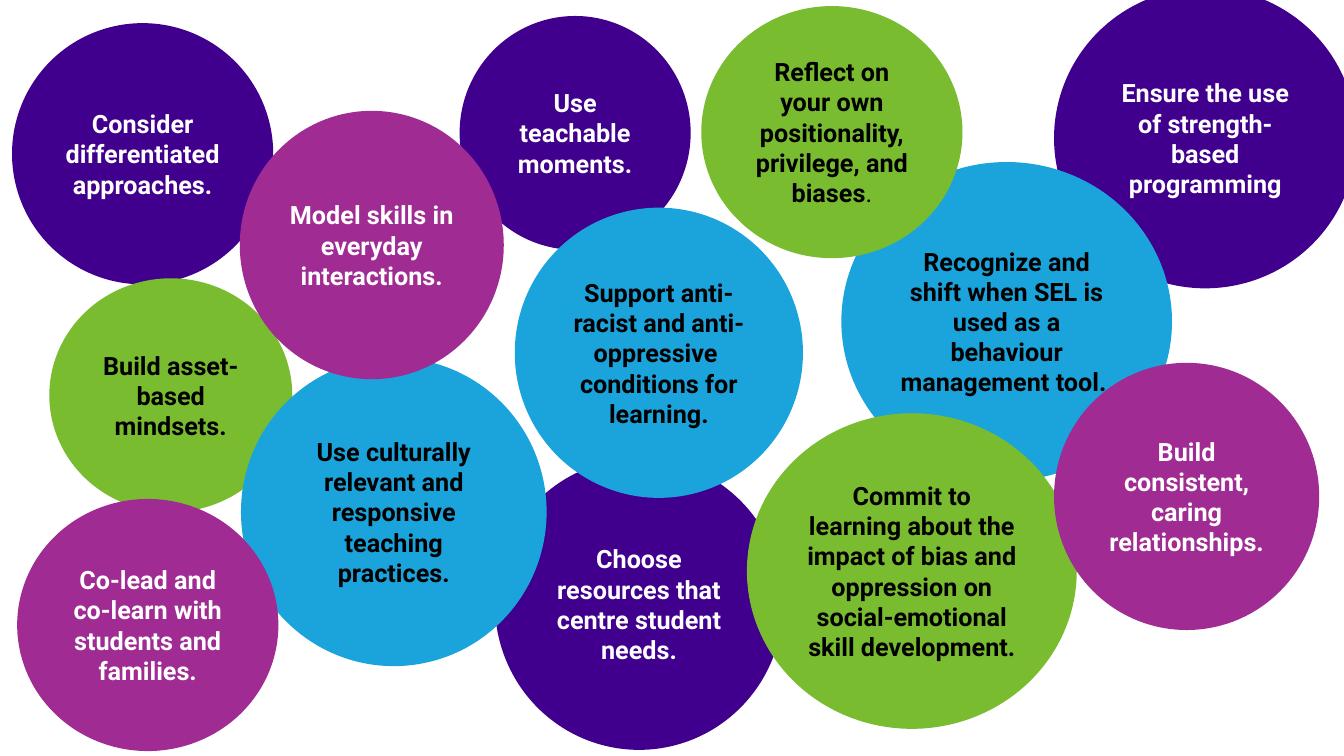
from dataclasses import dataclass

from pptx import Presentation
from pptx.dml.color import RGBColor
from pptx.enum.shapes import MSO_SHAPE
from pptx.enum.text import MSO_ANCHOR, PP_ALIGN
from pptx.shapes.autoshape import Shape
from pptx.slide import Slide
from pptx.util import Cm, Pt

OVAL = MSO_SHAPE.OVAL
MIDDLE = MSO_ANCHOR.MIDDLE
CENTER = PP_ALIGN.CENTER

PURPLE = RGBColor(0x40, 0x00, 0x8D)
BLUE = RGBColor(0x1B, 0xA3, 0xDC)
GREEN = RGBColor(0x7A, 0xBC, 0x30)
MAGENTA = RGBColor(0xA0, 0x2B, 0x93)
WHITE = RGBColor(0xFF, 0xFF, 0xFF)
BLACK = RGBColor(0x00, 0x00, 0x00)

TEXT_COLORS = {PURPLE: WHITE, MAGENTA: WHITE, BLUE: BLACK, GREEN: BLACK}
FONT_FORMAT = {"name": "Roboto", "size": Pt(18), "bold": True}
BLANK_LAYOUT = 6


@dataclass(frozen=True)
class Bubble:
    left: float
    top: float
    width: float
    height: float
    color: RGBColor
    text: str
    plain_ending: str = ""


BUBBLES = [
    Bubble(0.33, 0.61, 6.53, 6.53, PURPLE, "Consider differentiated approaches."),
    Bubble(11.61, 0.43, 5.77, 5.84, PURPLE, "Use teachable moments."),
    Bubble(12.5, 11.58, 7.21, 7.29, PURPLE, "Choose resources that centre student needs."),
    Bubble(26.59, -0.28, 7.57, 7.52, PURPLE, "Ensure the use of strength-based\nprogramming"),
    Bubble(21.23, 4.11, 8.28, 7.98, BLUE,
           "Recognize and shift when SEL is used as a behaviour management tool. "),
    Bubble(17.7, 0.18, 6.53, 6.3, GREEN,
           "Reflect on your own positionality, privilege, and biases", "."),
    Bubble(1.27, 7.04, 6.07, 5.84, GREEN, "Build asset-based mindsets."),
    Bubble(18.85, 10.44, 8.26, 7.9, GREEN,
           "Commit to learning about the impact of bias and oppression on "
           "social-emotional skill development."),
    Bubble(6.1, 9.04, 7.65, 7.72, BLUE,
           "Use culturally relevant and responsive teaching practices."),
    Bubble(13, 5.26, 7.21, 7.26, BLUE,
           "Support anti-racist and anti-oppressive \nconditions for learning."),
    Bubble(26.59, 9.17, 6.63, 6.68, MAGENTA, "Build consistent, caring relationships."),
    Bubble(6.07, 2.82, 6.6, 6.71, MAGENTA, "Model skills in everyday interactions."),
    Bubble(0.46, 12.6, 6.53, 6.3, MAGENTA,
           "Co-lead and co-learn with students and families."),
]


def write_text(shape: Shape, bubble: Bubble) -> None:
    text_frame = shape.text_frame
    text_frame.word_wrap = True
    text_frame.vertical_anchor = MIDDLE
    text_frame.text = bubble.text
    if bubble.plain_ending:
        text_frame.paragraphs[-1].add_run().text = bubble.plain_ending
    for paragraph in text_frame.paragraphs:
        paragraph.alignment = CENTER
        for run in paragraph.runs:
            for attribute, value in FONT_FORMAT.items():
                setattr(run.font, attribute, value)
            run.font.color.rgb = TEXT_COLORS[bubble.color]
    if bubble.plain_ending:
        text_frame.paragraphs[-1].runs[-1].font.bold = False


def draw_bubble(slide: Slide, bubble: Bubble) -> None:
    shape = slide.shapes.add_shape(
        OVAL, Cm(bubble.left), Cm(bubble.top), Cm(bubble.width), Cm(bubble.height)
    )
    shape.shadow.inherit = False
    shape.fill.solid()
    shape.fill.fore_color.rgb = bubble.color
    shape.line.color.rgb = bubble.color
    shape.line.width = Pt(1.5)
    write_text(shape, bubble)


def main() -> None:
    presentation = Presentation()
    presentation.slide_width = Cm(33.87)
    presentation.slide_height = Cm(19.05)
    slide = presentation.slides.add_slide(presentation.slide_layouts[BLANK_LAYOUT])
    for bubble in BUBBLES:
        draw_bubble(slide, bubble)
    presentation.save("out.pptx")


if __name__ == "__main__":
    main()
